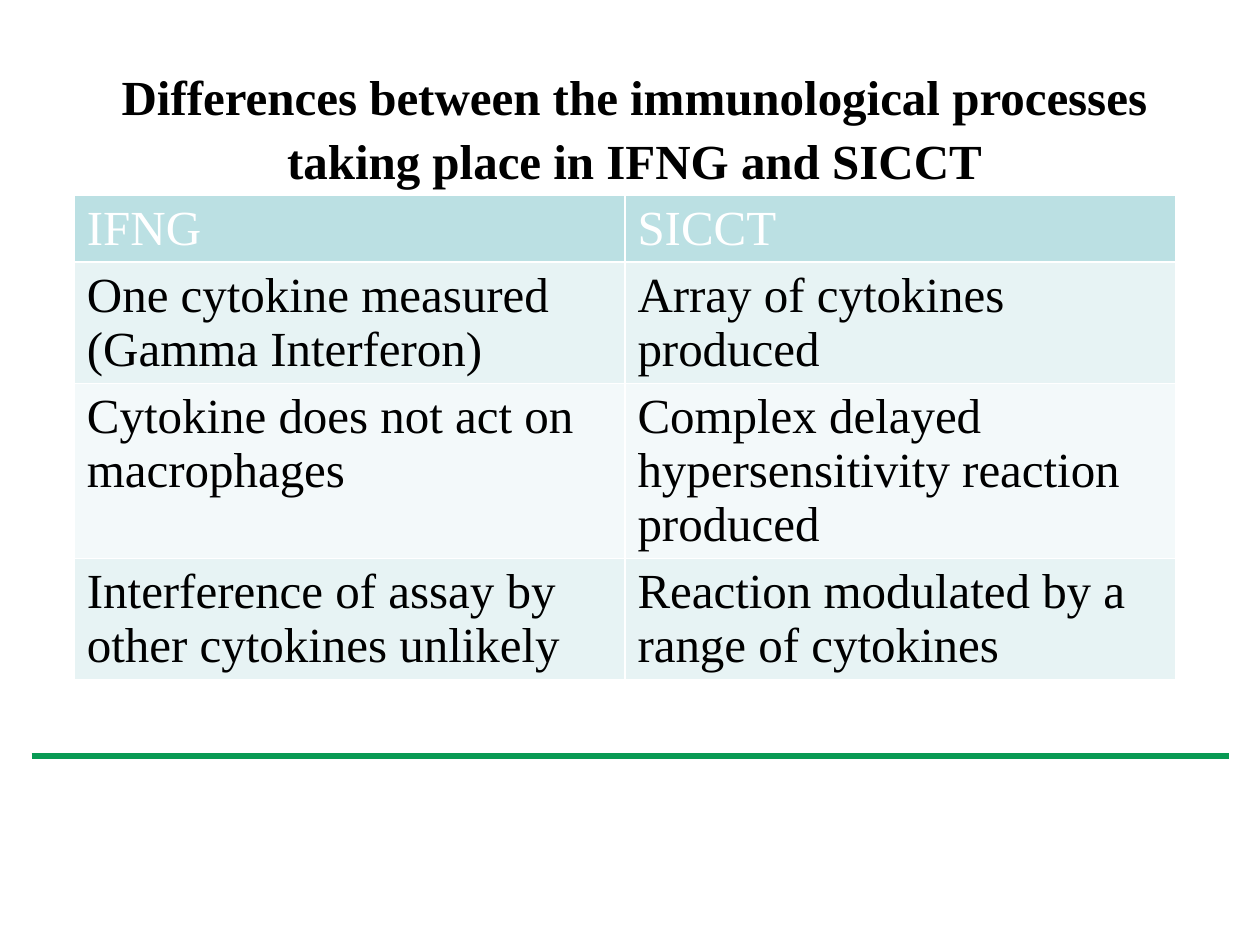
from pptx import Presentation
from pptx.dml.color import RGBColor
from pptx.enum.shapes import MSO_CONNECTOR
from pptx.enum.text import PP_ALIGN
from pptx.oxml.ns import qn
from pptx.util import Inches, Pt
from lxml.etree import SubElement

FONT = "Times New Roman"
BLACK, WHITE, GREEN = "000000", "FFFFFF", "089A54"
HEADER_FILL, BANDS = "BBE0E3", ("E7F3F4", "F3F9FA")

TITLE = ("Differences between the immunological processes "
         "taking place in IFNG and SICCT")
COMPARISON = [
    ("IFNG", "SICCT"),
    ("One cytokine measured (Gamma Interferon)", "Array of cytokines produced"),
    ("Cytokine does not act on macrophages",
     "Complex delayed hypersensitivity reaction produced"),
    ("Interference of assay by other cytokines unlikely",
     "Reaction modulated by a range of cytokines"),
]
ROW_HEIGHTS = (0.53, 0.96, 1.39, 0.96)
COLUMN_WIDTH = 4.37


def rgb(hex_color):
    return RGBColor.from_string(hex_color)


def write(text_frame, text, color, bold=False):
    paragraph = text_frame.paragraphs[0]
    paragraph.text = text
    font = paragraph.font
    font.name, font.size, font.bold = FONT, Pt(28), bold
    font.color.rgb = rgb(color)
    return paragraph


def add_footer_rule(slide):
    rule = slide.shapes.add_connector(
        MSO_CONNECTOR.STRAIGHT, Inches(0.25), Inches(6), Inches(9.75), Inches(6))
    rule.line.color.rgb = rgb(GREEN)
    rule.line.width = Pt(3)
    SubElement(rule._element.spPr, qn("a:effectLst"))


def add_title(slide):
    title = slide.shapes.add_textbox(
        Inches(0.35), Inches(0.44), Inches(9.37), Inches(1.04))
    title.text_frame.word_wrap = True
    heading = write(title.text_frame, TITLE, BLACK, bold=True)
    heading.alignment = PP_ALIGN.CENTER
    heading.line_spacing = 1.09


def add_comparison(slide):
    columns = len(COMPARISON[0])
    table = slide.shapes.add_table(
        len(COMPARISON), columns, Inches(0.59), Inches(1.55),
        Inches(COLUMN_WIDTH * columns), Inches(sum(ROW_HEIGHTS))).table
    for column in table.columns:
        column.width = Inches(COLUMN_WIDTH)
    for index, (row, height, texts) in enumerate(
            zip(table.rows, ROW_HEIGHTS, COMPARISON)):
        row.height = Inches(height)
        is_header = index == 0
        fill = HEADER_FILL if is_header else BANDS[(index - 1) % 2]
        for cell, text in zip(row.cells, texts):
            cell.fill.solid()
            cell.fill.fore_color.rgb = rgb(fill)
            write(cell.text_frame, text, WHITE if is_header else BLACK)


def main():
    deck = Presentation()
    deck.slide_width, deck.slide_height = Inches(10), Inches(7.5)
    slide = deck.slides.add_slide(deck.slide_layouts[6])
    # Green rule, then the table under its title
    add_footer_rule(slide)
    add_comparison(slide)
    add_title(slide)
    deck.save("out.pptx")


if __name__ == "__main__":
    main()
